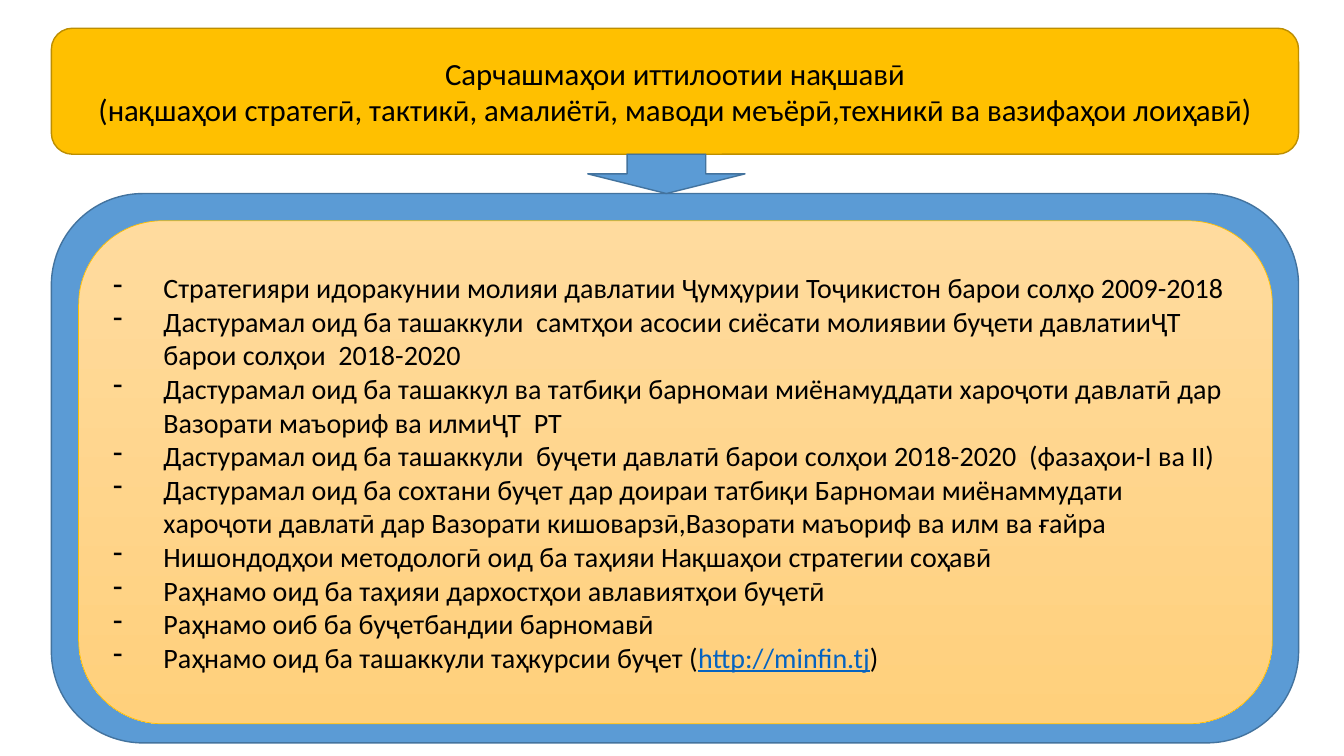
from dataclasses import dataclass

from lxml import etree
from pptx import Presentation
from pptx import util as u
from pptx.dml import color
from pptx.enum import shapes, text
from pptx.oxml import ns

COLORS = {
    "blue": "5B9BD5",
    "blue_line": "43739E",
    "gold": "FFC000",
    "gold_line": "BD8E00",
    "peach_top": "FFDB9E",
    "peach_bottom": "FFD07C",
    "black": "000000",
    "link": "0563C1",
}
FONT = "Calibri"
LINK = "http://minfin.tj"
TITLE = (
    "Сарчашмаҳои иттилоотии нақшавӣ",
    "(нақшаҳои стратегӣ, тактикӣ, амалиётӣ, маводи меъёрӣ,техникӣ ва вазифаҳои лоиҳавӣ)",
)
SOURCES = (
    "Стратегияри идоракунии молияи давлатии Ҷумҳурии Тоҷикистон барои солҳо 2009-2018",
    "Дастурамал оид ба ташаккули  самтҳои асосии сиёсати молиявии буҷети давлатииҶТ барои солҳои  2018-2020",
    "Дастурамал оид ба ташаккул ва татбиқи барномаи миёнамуддати хароҷоти давлатӣ дар Вазорати маъориф ва илмиҶТ  РТ",
    "Дастурамал оид ба ташаккули  буҷети давлатӣ барои солҳои 2018-2020  (фазаҳои-I ва II)",
    "Дастурамал оид ба сохтани буҷет дар доираи татбиқи Барномаи миёнаммудати хароҷоти давлатӣ дар "
    "Вазорати кишоварзӣ,Вазорати маъориф ва илм ва ғайра",
    "Нишондодҳои методологӣ оид ба таҳияи Нақшаҳои стратегии соҳавӣ",
    "Раҳнамо оид ба таҳияи дархостҳои авлавиятҳои буҷетӣ",
    "Раҳнамо оиб ба буҷетбандии барномавӣ",
    f"Раҳнамо оид ба ташаккули таҳкурсии буҷет ({LINK})",
)


@dataclass(frozen=True)
class Panel:
    left: float
    top: float
    width: float
    height: float
    fill: tuple[str, ...]
    line: str
    line_width: float = 1
    kind: shapes.MSO_SHAPE = shapes.MSO_SHAPE.ROUNDED_RECTANGLE
    lines: tuple[str, ...] = ()
    size: int = 20
    bulleted: bool = False


PANELS = (
    Panel(0.51, 1.92, 12.37, 5.45, ("blue",), "blue_line"),
    Panel(0.51, 0.28, 12.37, 1.25, ("gold",), "gold_line", lines=TITLE, size=22),
    Panel(0.78, 2.19, 11.84, 4.99, ("peach_top", "peach_bottom"), "gold", 0.5,
          lines=SOURCES, bulleted=True),
    Panel(5.83, 1.53, 1.56, 0.39, ("blue",), "blue_line", kind=shapes.MSO_SHAPE.DOWN_ARROW),
)


def rgb(name: str) -> color.RGBColor:
    return color.RGBColor.from_string(COLORS[name])


def add_runs(p, line: str) -> None:
    before, link, after = line.partition(LINK)
    for part in filter(None, (before, link, after)):
        r = p.add_run()
        r.text = part
        if part == LINK:
            r.font.underline = True
            r.font.color.rgb = rgb("link")


def add_dash(p) -> None:
    pPr = p._p.get_or_add_pPr()
    pPr.set("marL", str(u.Inches(0.5)))
    pPr.set("indent", str(-u.Inches(0.5)))
    bullet = etree.Element(ns.qn("a:buChar"), char="-")
    pPr.insert(0, bullet)


def write_lines(tf, panel: Panel) -> None:
    tf.word_wrap = True
    tf.vertical_anchor = text.MSO_ANCHOR.MIDDLE
    for i, line in enumerate(panel.lines):
        p = tf.add_paragraph() if i else tf.paragraphs[0]
        p.alignment = text.PP_ALIGN.LEFT if panel.bulleted else text.PP_ALIGN.CENTER
        p.font.name = FONT
        p.font.size = u.Pt(panel.size)
        p.font.color.rgb = rgb("black")
        add_runs(p, line)
        if panel.bulleted:
            add_dash(p)


def paint(fill, names: tuple[str, ...]) -> None:
    if len(names) == 1:
        fill.solid()
        fill.fore_color.rgb = rgb(names[0])
        return
    fill.gradient()
    fill.gradient_angle = 270
    for position, (stop, name) in enumerate(zip(fill.gradient_stops, names)):
        stop.position = position
        stop.color.rgb = rgb(name)


def add_panel(s, panel: Panel) -> None:
    box = map(u.Inches, (panel.left, panel.top, panel.width, panel.height))
    sp = s.shapes.add_shape(panel.kind, *box)
    sp.shadow.inherit = False
    paint(sp.fill, panel.fill)
    sp.line.color.rgb = rgb(panel.line)
    sp.line.width = u.Pt(panel.line_width)
    write_lines(sp.text_frame, panel)


def main() -> None:
    prs = Presentation()
    prs.slide_width, prs.slide_height = u.Inches(13.33), u.Inches(7.5)
    s = prs.slides.add_slide(prs.slide_layouts[6])
    for panel in PANELS:
        add_panel(s, panel)
    prs.save("out.pptx")


if __name__ == "__main__":
    main()
